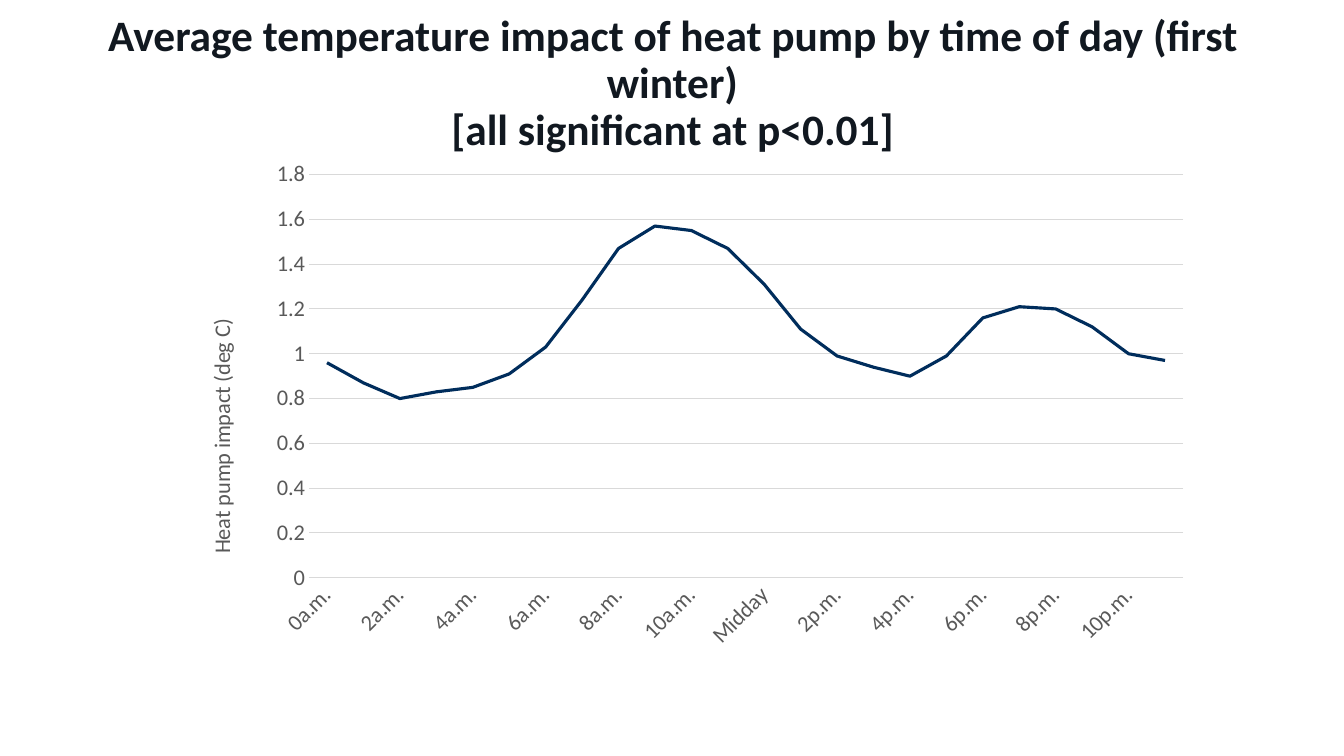
from lxml.etree import SubElement
from pptx import Presentation
from pptx.chart.data import CategoryChartData
from pptx.dml.color import RGBColor
from pptx.enum.chart import XL_CHART_TYPE, XL_TICK_MARK
from pptx.enum.text import MSO_ANCHOR, MSO_AUTO_SIZE, PP_ALIGN
from pptx.oxml.ns import qn
from pptx.util import Inches, Pt

# Content
TITLE_LINES = [
    "Average temperature impact of heat pump by time of day (first winter)",
    "[all significant at p<0.01]",
]
AXIS_TITLE = "Heat pump impact (deg C)"
HOURS = (
    [f"{hour}a.m." for hour in range(12)]
    + ["Midday"]
    + [f"{hour}p.m." for hour in range(1, 12)]
)
IMPACTS = [
    0.96, 0.87, 0.8, 0.83, 0.85, 0.91, 1.03, 1.24, 1.47, 1.57, 1.55, 1.47,
    1.31, 1.11, 0.99, 0.94, 0.9, 0.99, 1.16, 1.21, 1.2, 1.12, 1, 0.97,
]

# Style
FONT = "Calibri"
INK = RGBColor(0x11, 0x18, 0x20)
NAVY = RGBColor(0x00, 0x2D, 0x5C)
GREY = RGBColor(0x59, 0x59, 0x59)
GRID = RGBColor(0xD9, 0xD9, 0xD9)
TITLE_BOX = (0.68, 0.47, 11.98, 0.74)
CHART_BOX = (1.49, 1.59, 10.35, 5.91)


def style_font(font, size, color, bold=False):
    font.name, font.size, font.bold = FONT, Pt(size), bold
    font.color.rgb = color


def style_line(line, color, width):
    line.color.rgb = color
    line.width = Pt(width)


def set_layout(parent, index, **settings):
    """Place a chart part by shares of the chart's size."""
    for old in parent.findall(qn("c:layout")):
        parent.remove(old)
    layout = SubElement(parent, qn("c:layout"))
    manual = SubElement(layout, qn("c:manualLayout"))
    for name, value in settings.items():
        SubElement(manual, qn(f"c:{name}")).set("val", str(value))
    parent.insert(index, layout)


deck = Presentation()
deck.slide_width, deck.slide_height = Inches(13.33), Inches(7.5)
page = deck.slides.add_slide(deck.slide_layouts[5])

# Title
title = page.shapes.title
title.left, title.top, title.width, title.height = map(Inches, TITLE_BOX)
frame = title.text_frame
frame.margin_left = frame.margin_right = frame.margin_top = frame.margin_bottom = 0
frame.word_wrap = True
frame.auto_size = MSO_AUTO_SIZE.NONE
frame.vertical_anchor = MSO_ANCHOR.MIDDLE
para = frame.paragraphs[0]
para.text = "\v".join(TITLE_LINES)
para.alignment = PP_ALIGN.CENTER
para.line_spacing = 0.9
style_font(para.font, 31, INK, True)

# Line chart
data = CategoryChartData()
data.categories = HOURS
data.add_series("Series 1", IMPACTS)
chart = page.shapes.add_chart(
    XL_CHART_TYPE.LINE, *map(Inches, CHART_BOX), data
).chart
chart.has_title = False
chart.has_legend = False
chart.font.name, chart.font.size = FONT, Pt(10)
plot = chart.plots[0]
plot.vary_by_categories = False
impact = plot.series[0]
impact.smooth = False
style_line(impact.format.line, NAVY, 2.25)
plot_area = chart.element.find(qn("c:chart")).find(qn("c:plotArea"))
set_layout(plot_area, 0, layoutTarget="inner", xMode="edge", yMode="edge",
           x=0.152, y=0.024, w=0.838, h=0.677)

# Axes
hour_axis, impact_axis = chart.category_axis, chart.value_axis
for axis in (hour_axis, impact_axis):
    axis.major_tick_mark = axis.minor_tick_mark = XL_TICK_MARK.NONE
    style_font(axis.tick_labels.font, 16, GREY)
style_line(hour_axis.format.line, GRID, 0.75)
hour_axis.has_major_gridlines = False
label_body = hour_axis._element.find(qn("c:txPr")).find(qn("a:bodyPr"))
label_body.set("rot", "-2700000")
label_body.set("vert", "horz")

impact_axis.minimum_scale, impact_axis.maximum_scale = 0, 1.8
impact_axis.major_unit = 0.2
impact_axis.tick_labels.number_format = "General"
impact_axis.tick_labels.number_format_is_linked = False
impact_axis.format.line.fill.background()
impact_axis.has_major_gridlines = True
style_line(impact_axis.major_gridlines.format.line, GRID, 0.75)

# Value axis title
axis_title = impact_axis.axis_title
axis_frame = axis_title.text_frame
axis_frame.text = AXIS_TITLE
style_font(axis_frame.paragraphs[0].font, 16, GREY)
title_body = axis_frame._txBody.find(qn("a:bodyPr"))
title_body.set("rot", "-5400000")
title_body.set("vert", "horz")
set_layout(axis_title._element, 1, xMode="edge", yMode="edge", x=0.05, y=0.26)

deck.save("out.pptx")
